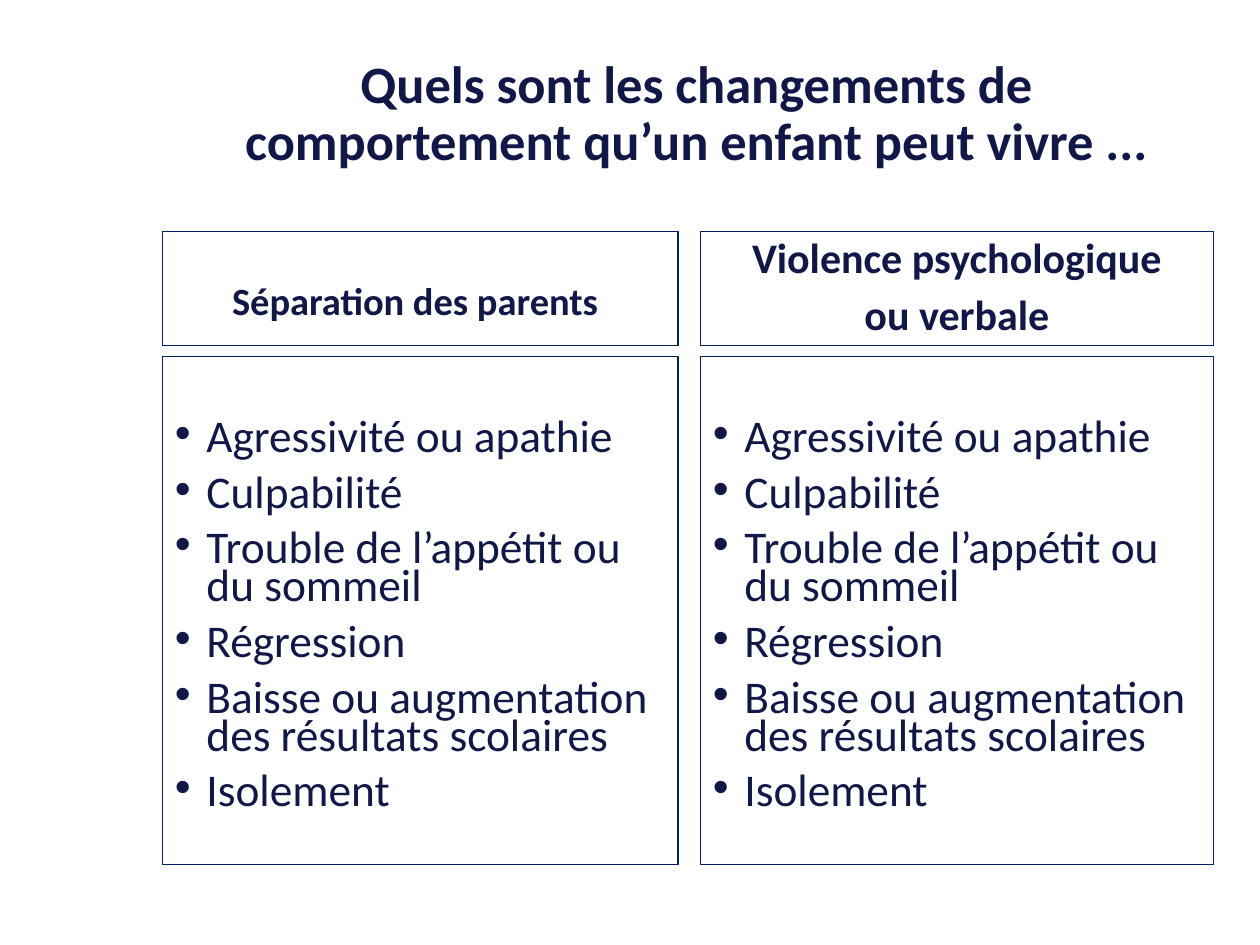
from dataclasses import dataclass

import pptx
import pptx.dml.color
import pptx.enum.shapes
import pptx.enum.text
import pptx.oxml.ns
import pptx.util
from lxml import etree
from pptx.util import Inches


@dataclass(frozen=True)
class Theme:
    font: str = "Calibri"
    text: str = "111748"
    border: str = "002060"
    title_size: float = 30
    left_heading_size: float = 22
    right_heading_size: float = 24
    list_size: float = 25.9
    border_width: float = 0.75
    paragraph_gap: float = 10


THEME = Theme()
TITLE = "Quels sont les changements de comportement qu’un enfant peut vivre ..."
CHANGES = [
    "Agressivité ou apathie",
    "Culpabilité",
    "Trouble de l’appétit ou du sommeil",
    "Régression",
    "Baisse ou augmentation des résultats scolaires",
    "Isolement",
]
HEADING_HEIGHT = 0.9
HEADING_GAP = 0.09


def color(value):
    return pptx.dml.color.RGBColor.from_string(value)


def add_bullet(paragraph):
    properties = paragraph._p.get_or_add_pPr()
    properties.set("marL", str(Inches(0.25)))
    properties.set("indent", str(Inches(-0.25)))
    font = etree.SubElement(properties, pptx.oxml.ns.qn("a:buFont"))
    font.set("typeface", "Arial")
    bullet = etree.SubElement(properties, pptx.oxml.ns.qn("a:buChar"))
    bullet.set("char", "•")


def write(frame, lines, size, spacing, bold=False, bullets=False):
    frame.word_wrap = True
    frame.auto_size = pptx.enum.text.MSO_AUTO_SIZE.NONE
    alignment = pptx.enum.text.PP_ALIGN
    for index, line in enumerate(lines):
        paragraph = frame.add_paragraph() if index else frame.paragraphs[0]
        if bullets:
            add_bullet(paragraph)
        paragraph.alignment = alignment.LEFT if bullets else alignment.CENTER
        paragraph.line_spacing = spacing
        paragraph.space_before = pptx.util.Pt(THEME.paragraph_gap if index else 0)
        run = paragraph.add_run()
        run.text = line
        run.font.name = THEME.font
        run.font.size = pptx.util.Pt(size)
        run.font.bold = bold
        run.font.color.rgb = color(THEME.text)


def add_title(slide, left, top, width, height):
    title = slide.shapes.title
    title.left, title.top = Inches(left), Inches(top)
    title.width, title.height = Inches(width), Inches(height)
    title.text_frame.vertical_anchor = pptx.enum.text.MSO_ANCHOR.MIDDLE
    write(title.text_frame, [TITLE], THEME.title_size, 0.9, bold=True)


def add_panel(slide, left, top, width, height, anchor):
    shape = slide.shapes.add_shape(
        pptx.enum.shapes.MSO_SHAPE.RECTANGLE,
        Inches(left), Inches(top), Inches(width), Inches(height))
    shape.shadow.inherit = False
    shape.fill.background()
    shape.line.color.rgb = color(THEME.border)
    shape.line.width = pptx.util.Pt(THEME.border_width)
    shape.text_frame.vertical_anchor = anchor
    return shape.text_frame


def add_column(slide, left, top, width, height, heading, size, spacing,
               margin_right=0.1, margin_bottom=0.05):
    anchors = pptx.enum.text.MSO_ANCHOR
    frame = add_panel(slide, left, top, width, HEADING_HEIGHT, anchors.BOTTOM)
    frame.margin_right = Inches(margin_right)
    frame.margin_bottom = Inches(margin_bottom)
    write(frame, heading, size, spacing, bold=True)

    offset = HEADING_HEIGHT + HEADING_GAP
    frame = add_panel(slide, left, top + offset, width, height - offset, anchors.TOP)
    frame.margin_top = Inches(0.52)
    write(frame, CHANGES, THEME.list_size, 0.7, bullets=True)


def main():
    presentation = pptx.Presentation()
    presentation.slide_width = Inches(10)
    presentation.slide_height = Inches(7.5)
    slide = presentation.slides.add_slide(presentation.slide_layouts[5])
    add_title(slide, 1.42, 0.29, 8.22, 1.25)
    add_column(slide, 1.29, 1.84, 4.09, 5.02, ["Séparation des parents"],
               THEME.left_heading_size, 0.9, margin_right=0.18, margin_bottom=0.17)
    add_column(slide, 5.56, 1.84, 4.07, 5.02, ["Violence psychologique", "ou verbale"],
               THEME.right_heading_size, 0.8)
    presentation.save("out.pptx")


if __name__ == "__main__":
    main()
